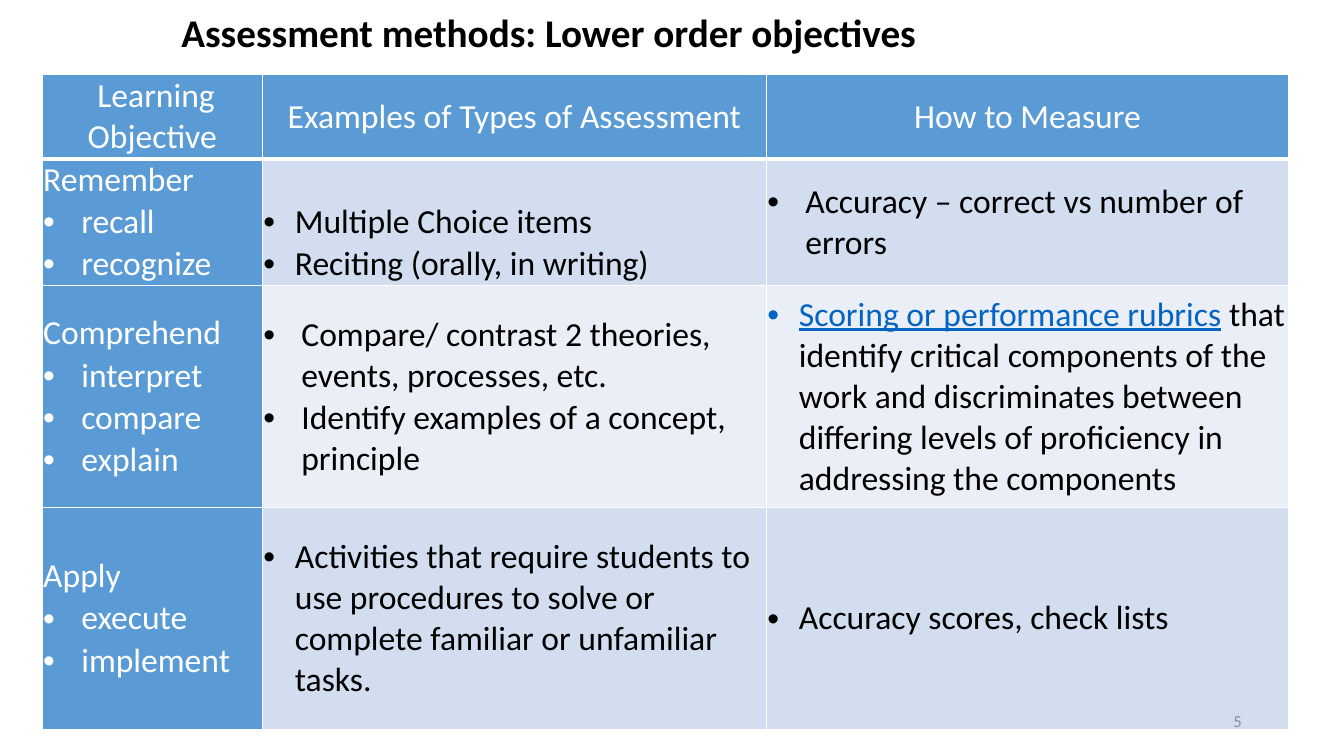
"""Build the slide on assessment methods for lower order objectives."""
from dataclasses import dataclass

from lxml import etree
from pptx import Presentation
from pptx import util as u
from pptx.dml.color import RGBColor
from pptx.enum import text
from pptx.oxml import ns


@dataclass(frozen=True)
class Theme:
    font: str = "Calibri"
    title_size: float = 28
    table_size: float = 24
    number_size: float = 12
    black: str = "000000"
    white: str = "FFFFFF"
    accent: str = "5B9BD5"
    bands: tuple[str, str] = ("D2DEEF", "EAEFF7")
    link: str = "0563C1"
    grey: str = "8C8C8C"
    rule: float = 1
    header_rule: float = 3


@dataclass(frozen=True)
class Box:
    left: float
    top: float
    width: float
    height: float

    def lengths(self) -> tuple[u.Length, ...]:
        return tuple(u.Pt(value) for value in (self.left, self.top, self.width, self.height))


@dataclass(frozen=True)
class Entry:
    items: tuple[str, ...]
    heading: str = ""
    linked: str = ""
    indent: float = 27.2
    gap: float = 0.8
    top_margin: float = 0.7


THEME = Theme()
WIDE, NARROW = 27.2, 22.6
TITLE = Box(122.4, 2.2, 690.5, 41)
TABLE = Box(30.2, 53.4, 890.4, 455)
NUMBER = Box(678.2, 500.4, 216, 28.8)
COLUMNS = (157.2, 360, 373.2)
ROWS = (54.7, 83.5, 158.4, 158.4)
HEADERS = (" Learning Objective", "Examples of Types of Assessment", "How to Measure")
BODY = (
    (
        Entry(("recall", "recognize"), heading="Remember"),
        Entry(("Multiple Choice items", "Reciting (orally, in writing)"),
              indent=NARROW, top_margin=30.7),
        Entry(("Accuracy – correct vs number of errors",)),
    ),
    (
        Entry(("interpret", "compare", "explain"), heading="Comprehend"),
        Entry(("Compare/ contrast 2 theories, events, processes, etc.",
               "Identify examples of a concept, principle")),
        Entry((" that identify critical components of the work and discriminates "
               "between differing levels of proficiency in addressing the components",),
              linked="Scoring or performance rubrics", indent=NARROW, gap=0),
    ),
    (
        Entry(("execute", "implement"), heading="Apply"),
        Entry(("Activities that require students to use procedures to solve or "
               "complete familiar or unfamiliar tasks.",), indent=NARROW, gap=0),
        Entry(("Accuracy scores, check lists",), indent=NARROW, gap=0),
    ),
)


def style(font, size: float, color: str, bold: bool = False) -> None:
    font.name = THEME.font
    font.size = u.Pt(size)
    font.bold = bold
    font.color.rgb = RGBColor.from_string(color)


def add_bullet(para, indent: float) -> None:
    properties = para._p.get_or_add_pPr()
    properties.set("marL", str(u.Pt(indent)))
    properties.set("indent", str(-u.Pt(indent)))
    etree.SubElement(properties, ns.qn("a:buFont")).set("typeface", "Arial")
    etree.SubElement(properties, ns.qn("a:buChar")).set("char", "•")


def format_cell(cell, fill: str, bottom_rule: float, top_margin: float = 0.7) -> None:
    cell.vertical_anchor = text.MSO_ANCHOR.MIDDLE
    cell.margin_left = cell.margin_right = cell.margin_bottom = u.Pt(0.7)
    cell.margin_top = u.Pt(top_margin)
    properties = cell._tc.get_or_add_tcPr()
    for side in "LRTB":
        width = bottom_rule if side == "B" else THEME.rule
        line = etree.SubElement(properties, ns.qn(f"a:ln{side}"), w=str(u.Pt(width)))
        solid = etree.SubElement(line, ns.qn("a:solidFill"))
        etree.SubElement(solid, ns.qn("a:srgbClr"), val=THEME.white)
    cell.fill.solid()
    cell.fill.fore_color.rgb = RGBColor.from_string(fill)


def write_entry(cell, entry: Entry, color: str) -> None:
    frame = cell.text_frame
    lines = ((entry.heading,) if entry.heading else ()) + entry.items
    for index, words in enumerate(lines):
        para = frame.add_paragraph() if index else frame.paragraphs[0]
        if words != entry.heading:
            add_bullet(para, entry.indent)
            para.space_before = u.Pt(entry.gap)
        style(para.font, THEME.table_size, color)
        if entry.linked:
            span = para.add_run()
            span.text = entry.linked
            span.font.underline = True
            span.font.color.rgb = RGBColor.from_string(THEME.link)
        para.add_run().text = words


def add_title(page) -> None:
    title = page.shapes.title
    title.left, title.top, title.width, title.height = TITLE.lengths()
    frame = title.text_frame
    frame.text = "Assessment methods: Lower order objectives"
    frame.auto_size = text.MSO_AUTO_SIZE.NONE
    frame.vertical_anchor = text.MSO_ANCHOR.TOP
    para = frame.paragraphs[0]
    para.alignment = text.PP_ALIGN.LEFT
    style(para.font, THEME.title_size, THEME.black, bold=True)


def add_objectives(page) -> None:
    table = page.shapes.add_table(len(ROWS), len(COLUMNS), *TABLE.lengths()).table
    table.first_row = table.horz_banding = False
    for column, width in zip(table.columns, COLUMNS):
        column.width = u.Pt(width)
    for row, height in zip(table.rows, ROWS):
        row.height = u.Pt(height)
    for index, words in enumerate(HEADERS):
        cell = table.cell(0, index)
        format_cell(cell, THEME.accent, THEME.header_rule)
        para = cell.text_frame.paragraphs[0]
        para.text = words
        para.alignment = text.PP_ALIGN.CENTER
        style(para.font, THEME.table_size, THEME.white)
    for row_index, entries in enumerate(BODY):
        for index, entry in enumerate(entries):
            cell = table.cell(row_index + 1, index)
            fill = THEME.bands[row_index % 2] if index else THEME.accent
            format_cell(cell, fill, THEME.rule, entry.top_margin)
            write_entry(cell, entry, THEME.black if index else THEME.white)


def add_number(page) -> None:
    frame = page.shapes.add_textbox(*NUMBER.lengths()).text_frame
    frame.word_wrap = True
    frame.vertical_anchor = text.MSO_ANCHOR.MIDDLE
    para = frame.paragraphs[0]
    para.text = "5"
    para.alignment = text.PP_ALIGN.RIGHT
    style(para.font, THEME.number_size, THEME.grey)


def main() -> None:
    deck = Presentation()
    deck.slide_width, deck.slide_height = u.Pt(960), u.Pt(540)
    page = deck.slides.add_slide(deck.slide_layouts[5])
    add_objectives(page)
    add_title(page)
    add_number(page)
    deck.save("out.pptx")


if __name__ == "__main__":
    main()
